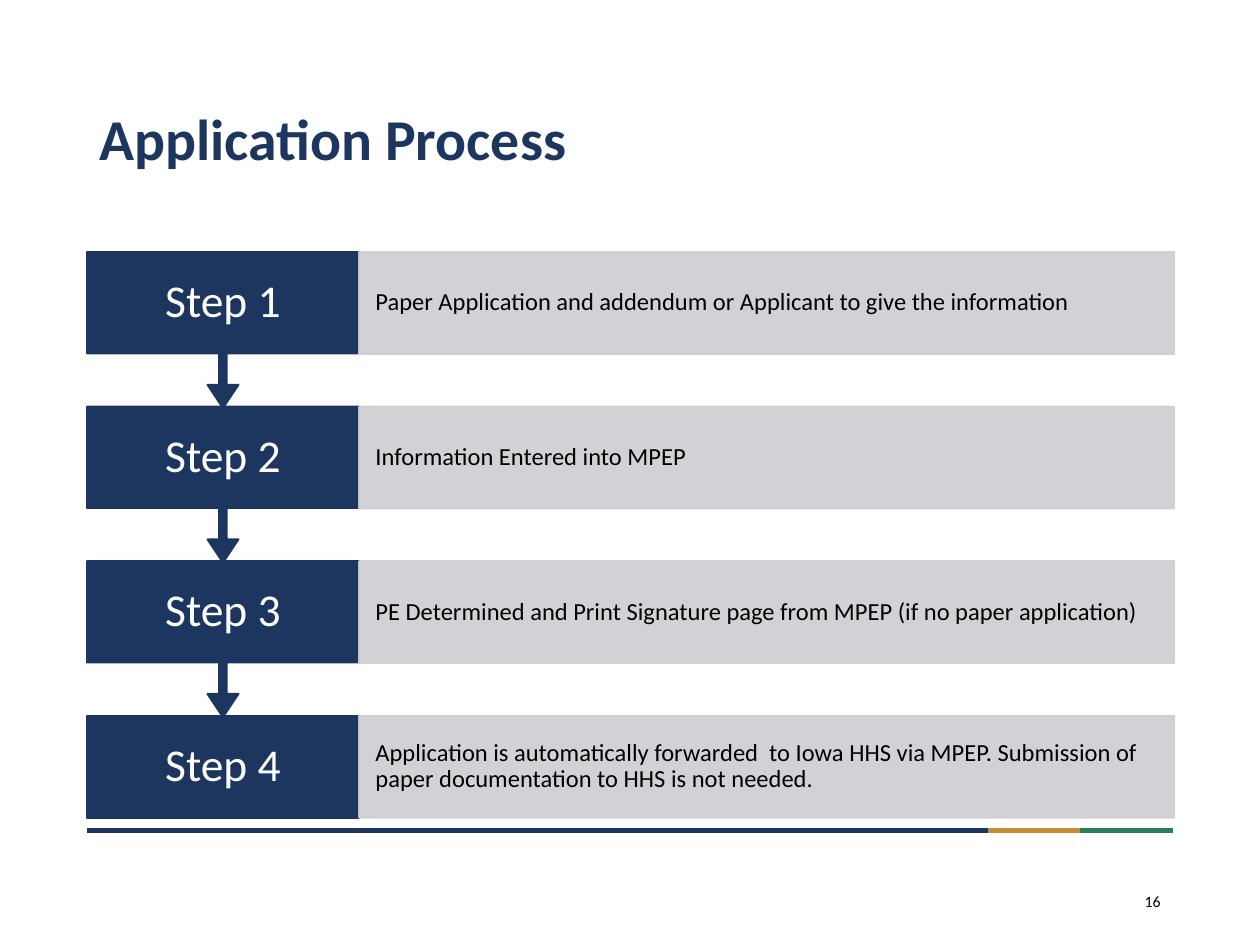
from pptx import Presentation
from pptx.dml.color import RGBColor
from pptx.enum.shapes import MSO_CONNECTOR as Connector, MSO_SHAPE as Shape
from pptx.enum.text import MSO_ANCHOR as Anchor, MSO_AUTO_SIZE as AutoSize, PP_ALIGN as Align
from pptx.oxml.ns import qn
from pptx.util import Inches, Pt
from lxml.etree import SubElement

COLORS = {
    "navy": "1C365F",
    "gold": "C48D34",
    "green": "277E5F",
    "gray": "CDCED2",
    "white": "FFFFFF",
    "black": "000000",
}
STEPS = [
    "Paper Application and addendum or Applicant to give the information",
    "Information Entered into MPEP",
    "PE Determined and Print Signature page from MPEP (if no paper application)",
    "Application is automatically forwarded  to Iowa HHS via MPEP. "
    "Submission of paper documentation to HHS is not needed.",
]
RULE_PARTS = [("navy", 0.69, 7.84), ("gold", 7.84, 8.57), ("green", 8.57, 9.31)]

LEFT, TOP, LAST_TOP = 0.69, 2, 5.68
LABEL_WIDTH, DETAIL_WIDTH = 2.16, 6.47
STEP_HEIGHT, CALLOUT_HEIGHT = 0.81, 1.24
STEP_PITCH = (LAST_TOP - TOP) / (len(STEPS) - 1)
CALLOUT_ADJUSTMENTS = [0.05, 0.1, 0.15, 0.65]

TITLE_FORMAT = {"size": Pt(33), "bold": True}
LABEL_FORMAT = {"size": Pt(26)}
DETAIL_FORMAT = {"size": Pt(14)}
NUMBER_FORMAT = {"size": Pt(9)}


def rgb(color):
    return RGBColor.from_string(COLORS[color])


def set_attributes(target, values):
    for attribute, value in values.items():
        setattr(target, attribute, value)


def write_text(holder, words, font_format, color, align, margins=(0.1, 0.05), spacing=0.9):
    side, vertical = (Inches(margin) for margin in margins)
    frame = holder.text_frame
    set_attributes(frame, {
        "text": words,
        "word_wrap": True,
        "auto_size": AutoSize.NONE,
        "vertical_anchor": Anchor.MIDDLE,
        "margin_left": side,
        "margin_right": side,
        "margin_top": vertical,
        "margin_bottom": vertical,
    })
    paragraph = frame.paragraphs[0]
    set_attributes(paragraph, {"alignment": align, "line_spacing": spacing})
    set_attributes(paragraph.runs[0].font, {"name": "Calibri", **font_format})
    paragraph.runs[0].font.color.rgb = rgb(color)


def add_panel(slide, kind, left, top, width, height, color):
    panel = slide.shapes.add_shape(kind, Inches(left), Inches(top), Inches(width), Inches(height))
    panel.shadow.inherit = False
    panel.fill.solid()
    panel.fill.fore_color.rgb = rgb(color)
    panel.line.color.rgb = rgb(color)
    panel.line.width = Pt(1)
    return panel


def make_translucent(panel, percent):
    for color in panel._element.spPr.iter(qn("a:srgbClr")):
        SubElement(color, qn("a:alpha"), val=str(percent * 1000))


def add_step(slide, number, detail):
    top = TOP + (number - 1) * STEP_PITCH
    if number < len(STEPS):
        label = add_panel(slide, Shape.DOWN_ARROW_CALLOUT, LEFT, top, LABEL_WIDTH, CALLOUT_HEIGHT, "navy")
        for index, value in enumerate(CALLOUT_ADJUSTMENTS):
            label.adjustments[index] = value
    else:
        label = add_panel(slide, Shape.RECTANGLE, LEFT, top, LABEL_WIDTH, STEP_HEIGHT, "navy")
    write_text(label, f"Step {number}", LABEL_FORMAT, "white", Align.CENTER, (0.15, 0.2))

    description = add_panel(slide, Shape.RECTANGLE, LEFT + LABEL_WIDTH, top,
                            DETAIL_WIDTH, STEP_HEIGHT, "gray")
    make_translucent(description, 90)
    write_text(description, detail, DETAIL_FORMAT, "black", Align.LEFT, (0.13, 0.19))


def add_rule_part(slide, color, start, end):
    rule = slide.shapes.add_connector(
        Connector.STRAIGHT, Inches(start), Inches(6.59), Inches(end), Inches(6.59))
    rule.line.color.rgb = rgb(color)
    rule.line.width = Pt(3)
    SubElement(rule._element.spPr, qn("a:effectLst"))


def add_title(slide, words):
    title = slide.shapes.title
    set_attributes(title, {"left": Inches(LEFT), "top": Inches(0.4),
                           "width": Inches(8.62), "height": Inches(1.45)})
    write_text(title, words, TITLE_FORMAT, "navy", Align.LEFT)


def add_page_number(slide, number):
    page_number = slide.shapes.add_textbox(Inches(7.06), Inches(6.95), Inches(2.25), Inches(0.4))
    write_text(page_number, number, NUMBER_FORMAT, "black", Align.RIGHT, spacing=1.0)


def main():
    deck = Presentation()
    set_attributes(deck, {"slide_width": Inches(10), "slide_height": Inches(7.5)})
    slide = deck.slides.add_slide(deck.slide_layouts[5])
    for color, start, end in RULE_PARTS:
        add_rule_part(slide, color, start, end)
    add_title(slide, "Application Process")
    for number, detail in reversed(list(enumerate(STEPS, 1))):
        add_step(slide, number, detail)
    add_page_number(slide, "16")
    deck.save("out.pptx")


if __name__ == "__main__":
    main()
